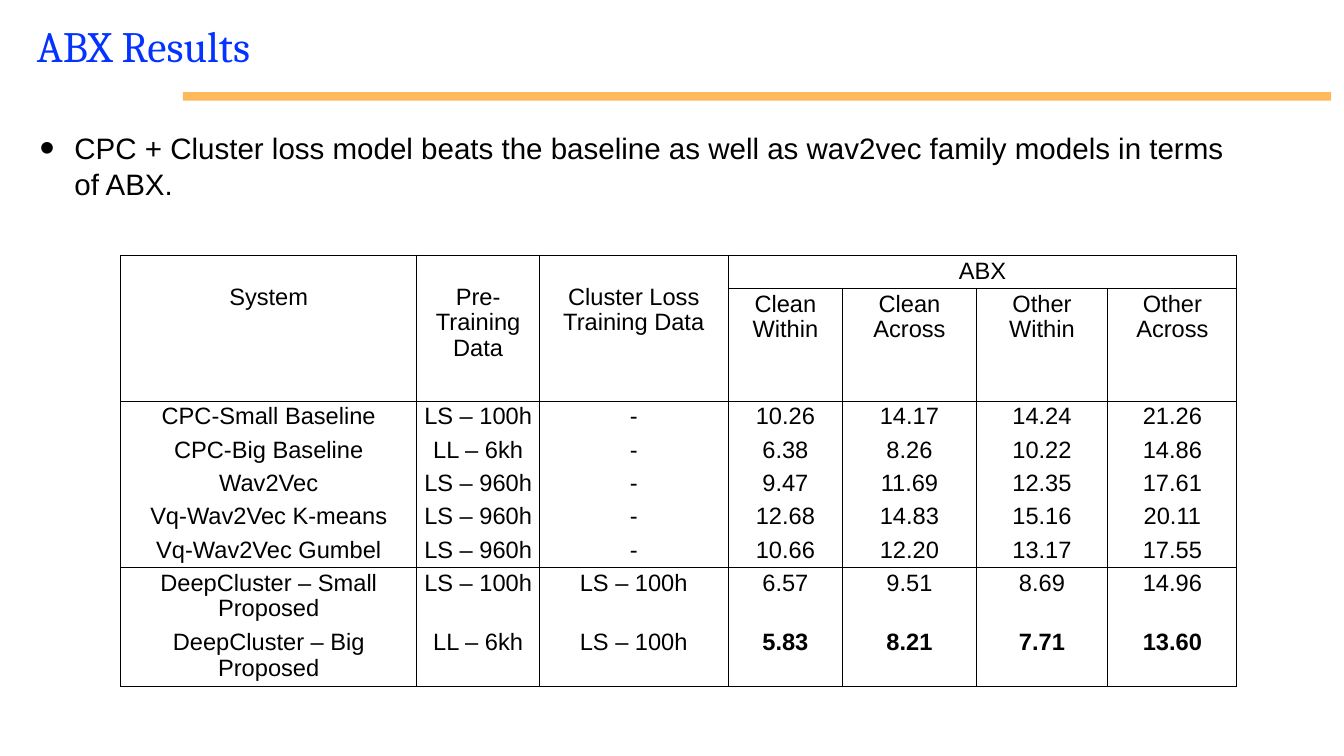
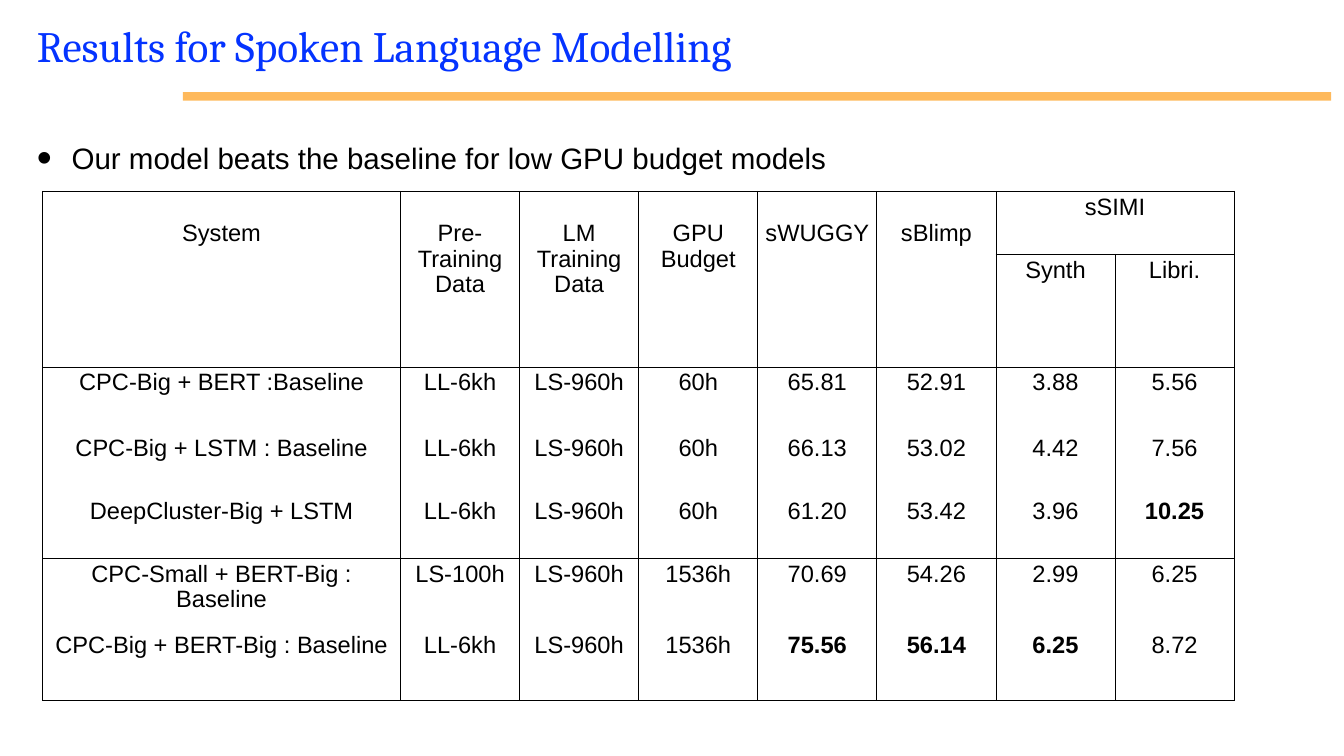
from lxml import etree
from pptx import Presentation, util as u
from pptx.dml.color import RGBColor
from pptx.enum import shapes, text
from pptx.oxml import ns

HUES = {"title": "0433FF", "band": "FE9301", "ink": "000000"}
HEAD, BODY = "Cambria", "Arial"
PLAIN = "{2D5ABB26-0587-4C30-8999-92F81FD0307C}"
PAD, DROP = 0.05, 0.42

ABX = {
    "title": "ABX Results",
    "point": "CPC + Cluster loss model beats the baseline as well as wav2vec "
             "family models in terms of ABX.",
    "note": (0.5, 1.78, 17.08, 1.2),
    "spot": (1.7, 3.6),
    "cols": [4.18, 1.73, 2.66, 1.62, 1.88, 1.86, 1.82],
    "rows": [0.47, 1.59] + [0.47] * 5 + [0.84] * 2,
    "tall": 3,
    "groups": [(2, 6), (7, 8)],
    "cells": [
        "System|Pre-Training Data|Cluster Loss Training Data|ABX|||",
        "|||Clean Within|Clean Across|Other Within|Other Across",
        "CPC-Small Baseline|LS – 100h|-|10.26|14.17|14.24|21.26",
        "CPC-Big Baseline|LL – 6kh|-|6.38|8.26|10.22|14.86",
        "Wav2Vec|LS – 960h|-|9.47|11.69|12.35|17.61",
        "Vq-Wav2Vec K-means|LS – 960h|-|12.68|14.83|15.16|20.11",
        "Vq-Wav2Vec Gumbel|LS – 960h|-|10.66|12.20|13.17|17.55",
        "DeepCluster – Small Proposed|LS – 100h|LS – 100h|6.57|9.51|8.69|14.96",
        "DeepCluster – Big Proposed|LL – 6kh|LS – 100h|*5.83|*8.21|*7.71|*13.60",
    ],
}
SPOKEN = {
    "title": "Results for Spoken Language Modelling",
    "point": "Our model beats the baseline for low GPU budget models",
    "note": (0.46, 1.91, 17.12, 0.7),
    "spot": (0.6, 2.7),
    "cols": [5.05] + [1.68] * 7,
    "rows": [0.89, 1.59, 0.92, 0.89, 0.89, 1, 1],
    "tall": 6,
    "groups": [(2, 4), (5, 6)],
    "cells": [
        "System|Pre-Training Data|LM Training Data|GPU Budget|sWUGGY|sBlimp|sSIMI|",
        "||||||Synth|Libri.",
        "CPC-Big + BERT :Baseline|LL-6kh|LS-960h|60h|65.81|52.91|3.88|5.56",
        "CPC-Big + LSTM : Baseline|LL-6kh|LS-960h|60h|66.13|53.02|4.42|7.56",
        "DeepCluster-Big + LSTM|LL-6kh|LS-960h|60h|61.20|53.42|3.96|*10.25",
        "CPC-Small + BERT-Big : Baseline|LS-100h|LS-960h|1536h|70.69|54.26|2.99|6.25",
        "CPC-Big + BERT-Big : Baseline|LL-6kh|LS-960h|1536h|*75.56|*56.14|*6.25|8.72",
    ],
}


def sub(node, tag, **attrs):
    """Add a drawing element under a node."""
    return etree.SubElement(node, ns.qn(tag), attrs)


def write(para, words, size, face, hue, bold=False):
    """Add one styled run to a paragraph."""
    run = para.add_run()
    run.text = words
    font = run.font
    font.size, font.name, font.bold = u.Pt(size), face, bold
    font.color.rgb = RGBColor.from_string(HUES[hue])


def frame(shape):
    """Give a text shape its margins and wrapping."""
    body = shape.text_frame
    body.word_wrap = True
    body.auto_size = text.MSO_AUTO_SIZE.NONE
    body.margin_left = body.margin_right = u.Inches(0.06)
    body.margin_top = body.margin_bottom = u.Inches(0.06)
    return body


def band(slide, box):
    """Draw the translucent rule below the title."""
    bar = slide.shapes.add_shape(shapes.MSO_SHAPE.RECTANGLE, *map(u.Inches, box))
    bar.shadow.inherit = False
    bar.fill.solid()
    bar.fill.fore_color.rgb = RGBColor.from_string(HUES["band"])
    bar.line.fill.background()
    tint = bar.fill._xPr.find(".//" + ns.qn("a:srgbClr"))
    sub(tint, "a:alpha", val="64000")


def head(slide, words, box):
    """Place and fill the title."""
    name = slide.shapes.title
    name.left, name.top, name.width, name.height = map(u.Inches, box)
    body = frame(name)
    body.vertical_anchor = text.MSO_ANCHOR.MIDDLE
    para = body.paragraphs[0]
    para.alignment = text.PP_ALIGN.LEFT
    write(para, words, 44, HEAD, "title")


def point(slide, words, box):
    """Place the bulleted statement."""
    para = frame(slide.shapes.add_textbox(*map(u.Inches, box))).paragraphs[0]
    props = para._p.get_or_add_pPr()
    props.set("marL", str(u.Inches(0.49)))
    props.set("indent", str(-u.Inches(0.49)))
    sub(props, "a:buSzPct", val="145000")
    sub(props, "a:buFont", typeface=BODY)
    sub(props, "a:buChar", char="•")
    write(para, words, 30, BODY, "ink")


def edge(cell, sides):
    """Rule the given sides of a cell and clear its fill."""
    props = cell._tc.get_or_add_tcPr()
    for side in "LRTB":
        line = sub(props, "a:ln" + side, w=str(u.Pt(1)))
        if side in sides:
            sub(sub(line, "a:solidFill"), "a:srgbClr", val=HUES["ink"])
        else:
            sub(line, "a:noFill")
    cell.fill.background()


def sides(row, groups):
    """Name the ruled sides for a row, given the groups of rows."""
    for first, last in groups:
        if first <= row <= last:
            return "LR" + "T" * (row == first) + "B" * (row == last)
    return "LRTB"


def grid(slide, data):
    """Build the results table."""
    cols, rows, tall = data["cols"], data["rows"], data["tall"]
    box = (*data["spot"], sum(cols), sum(rows))
    shape = slide.shapes.add_table(len(rows), len(cols), *map(u.Inches, box))
    table = shape.table
    table.first_row = table.horz_banding = False
    table._tbl.tblPr.find(ns.qn("a:tableStyleId")).text = PLAIN
    for col, wide in zip(table.columns, cols):
        col.width = u.Inches(wide)
    for row, high in zip(table.rows, rows):
        row.height = u.Inches(high)
    for i, line in enumerate(data["cells"]):
        for j, words in enumerate(line.split("|")):
            cell = table.cell(i, j)
            edge(cell, sides(i, data["groups"]))
            cell.margin_top = u.Inches(DROP if i == 0 and j < tall else PAD)
            para = cell.text_frame.paragraphs[0]
            para.alignment = text.PP_ALIGN.CENTER
            para.line_spacing = 0.97
            if words:
                write(para, words.lstrip("*"), 24, BODY, "ink", words[0] == "*")
    for j in range(tall):
        table.cell(0, j).merge(table.cell(1, j))
    table.cell(0, tall).merge(table.cell(0, len(cols) - 1))


def page(deck, data):
    """Add one slide of results."""
    slide = deck.slides.add_slide(deck.slide_layouts[5])
    band(slide, (2.58, 1.3, 16.2, 0.12))
    head(slide, data["title"], (0.46, 0.05, 18.24, 1.18))
    point(slide, data["point"], data["note"])
    grid(slide, data)


def main():
    """Build and save the deck."""
    deck = Presentation()
    deck.slide_width, deck.slide_height = u.Inches(18.96), u.Inches(10.67)
    for data in (ABX, SPOKEN):
        page(deck, data)
    deck.save("out.pptx")


if __name__ == "__main__":
    main()
